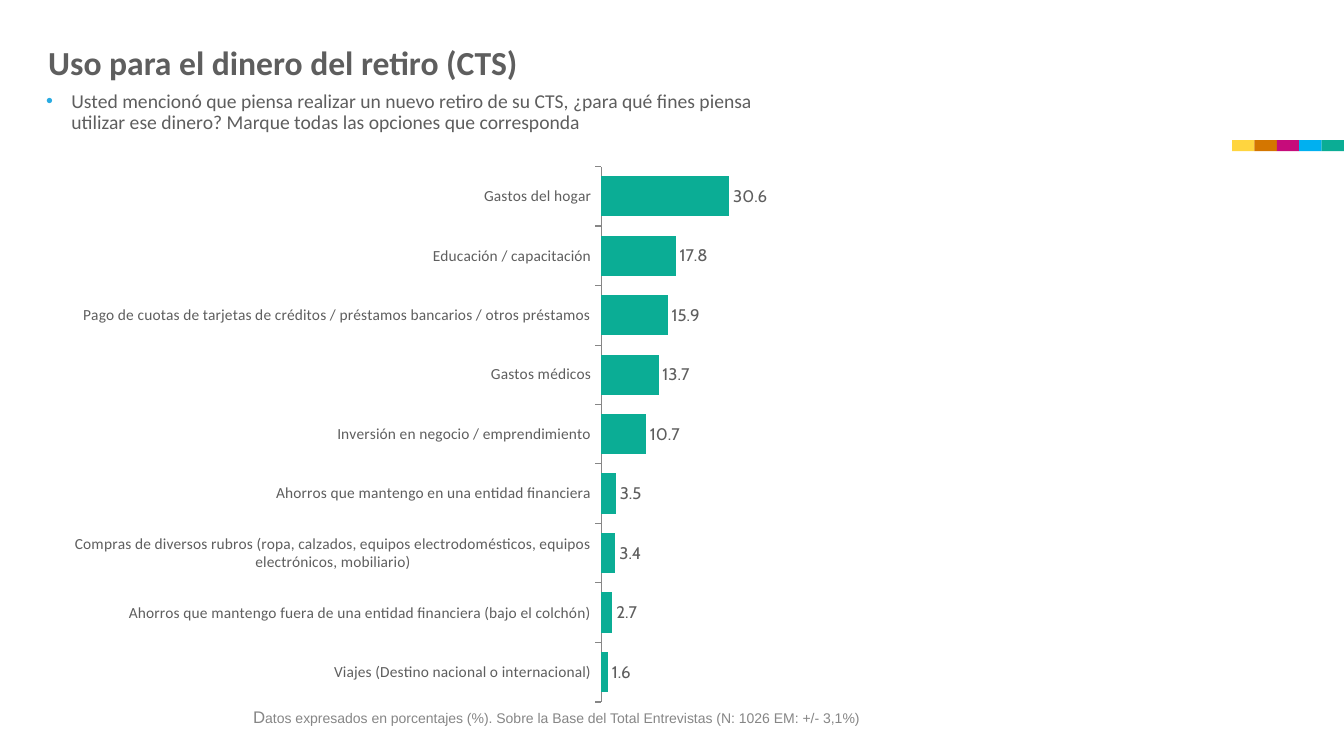
from dataclasses import dataclass

from lxml import etree
from pptx import Presentation
from pptx.chart.data import CategoryChartData
from pptx.dml.color import RGBColor
from pptx.enum.chart import XL_CHART_TYPE, XL_LABEL_POSITION, XL_TICK_LABEL_POSITION, XL_TICK_MARK
from pptx.enum.shapes import MSO_SHAPE
from pptx.enum.text import MSO_ANCHOR, PP_ALIGN
from pptx.oxml import parse_xml
from pptx.oxml.ns import nsdecls, qn
from pptx.slide import Slide
from pptx.util import Inches, Pt

BAR_CLUSTERED = XL_CHART_TYPE.BAR_CLUSTERED
OUTSIDE_END = XL_LABEL_POSITION.OUTSIDE_END
LABELS_LOW = XL_TICK_LABEL_POSITION.LOW
TICK_OUTSIDE = XL_TICK_MARK.OUTSIDE
TICK_NONE = XL_TICK_MARK.NONE
RECTANGLE = MSO_SHAPE.RECTANGLE
TOP, MIDDLE = MSO_ANCHOR.TOP, MSO_ANCHOR.MIDDLE
LEFT, RIGHT = PP_ALIGN.LEFT, PP_ALIGN.RIGHT


@dataclass(frozen=True)
class Theme:
    text: str = "5E5E5E"
    note: str = "868686"
    bullet: str = "29ABE2"
    bar: str = "0BAD95"
    stripe: tuple[str, ...] = ("FFD53F", "D47600", "C60C7B", "00B0F0", "0BAD95")
    body_font: str = "Calibri"
    chart_font: str = "Cabin"
    note_font: str = "Arial"
    title_size: int = 24
    question_size: int = 14
    value_size: int = 12
    category_size: int = 11
    note_initial_size: int = 12
    note_size: int = 10


THEME = Theme()


@dataclass(frozen=True)
class Span:
    text: str
    size: int


@dataclass(frozen=True)
class TextBlock:
    left: float
    top: float
    width: float
    height: float
    spans: tuple[Span, ...]
    font: str
    color: str
    bold: bool = False
    bullet: bool = False
    anchor: MSO_ANCHOR = TOP
    align: PP_ALIGN = LEFT
    line_spacing: float = 1.0


@dataclass(frozen=True)
class Use:
    name: str
    percent: float


TEXT_BLOCKS = (
    TextBlock(
        0.38, 0.41, 10.79, 0.52,
        (Span("Uso para el dinero del retiro (CTS)", THEME.title_size),),
        THEME.body_font, THEME.text, bold=True, line_spacing=0.9,
    ),
    TextBlock(
        0.36, 0.86, 7.36, 0.42,
        (Span("Usted mencionó que piensa realizar un nuevo retiro de su CTS, ¿para qué fines piensa "
              "utilizar ese dinero? Marque todas las opciones que corresponda", THEME.question_size),),
        THEME.body_font, THEME.text, bullet=True, line_spacing=0.9,
    ),
    TextBlock(
        0.82, 6.96, 7.8, 0.31,
        (Span("D", THEME.note_initial_size),
         Span("atos expresados en porcentajes (%). Sobre la Base del Total Entrevistas "
              "(N: 1026 EM: +/- 3,1%)", THEME.note_size)),
        THEME.note_font, THEME.note, anchor=MIDDLE, align=RIGHT,
    ),
)

USES = (
    Use("Gastos del hogar", 30.6),
    Use("Educación / capacitación", 17.8),
    Use("Pago de cuotas de tarjetas de créditos / préstamos bancarios / otros préstamos", 15.9),
    Use("Gastos médicos", 13.7),
    Use("Inversión en negocio / emprendimiento", 10.7),
    Use("Ahorros que mantengo en una entidad financiera", 3.5),
    Use("Compras de diversos rubros (ropa, calzados, equipos electrodomésticos, "
        "equipos electrónicos, mobiliario)", 3.4),
    Use("Ahorros que mantengo fuera de una entidad financiera (bajo el colchón)", 2.7),
    Use("Viajes (Destino nacional o internacional)", 1.6),
)


def rgb(color: str) -> RGBColor:
    return RGBColor.from_string(color)


def add_stripe(page: Slide) -> None:
    width = 1.11 / len(THEME.stripe)
    for index, color in enumerate(THEME.stripe):
        block = page.shapes.add_shape(
            RECTANGLE, Inches(12.22 + index * width), Inches(1.39), Inches(width), Inches(0.11))
        block.shadow.inherit = False
        block.fill.solid()
        block.fill.fore_color.rgb = rgb(color)
        block.line.fill.background()


def add_text(page: Slide, block: TextBlock) -> None:
    box = page.shapes.add_textbox(
        Inches(block.left), Inches(block.top), Inches(block.width), Inches(block.height))
    frame = box.text_frame
    frame.word_wrap = True
    frame.vertical_anchor = block.anchor
    para = frame.paragraphs[0]
    para.alignment = block.align
    para.line_spacing = block.line_spacing
    if block.bullet:
        properties = para._p.get_or_add_pPr()
        properties.set("marL", str(Inches(0.25)))
        properties.set("indent", str(Inches(-0.25)))
        bullet_color = etree.SubElement(properties, qn("a:buClr"))
        etree.SubElement(bullet_color, qn("a:srgbClr"), val=THEME.bullet)
        etree.SubElement(properties, qn("a:buFont"), typeface="Arial")
        etree.SubElement(properties, qn("a:buChar"), char="•")
    para.font.name = block.font
    para.font.bold = block.bold
    para.font.color.rgb = rgb(block.color)
    if len(block.spans) == 1:
        para.font.size = Pt(block.spans[0].size)
    for span in block.spans:
        run = para.add_run()
        run.text = span.text
        if len(block.spans) > 1:
            run.font.size = Pt(span.size)


def add_uses_chart(page: Slide) -> None:
    data = CategoryChartData(number_format="0.0")
    data.categories = [use.name for use in USES]
    data.add_series("Series 1", [use.percent for use in USES])
    chart = page.shapes.add_chart(
        BAR_CLUSTERED, Inches(0.7), Inches(1.29), Inches(13.6), Inches(5.75), data).chart
    chart.has_legend = False
    chart.has_title = False
    chart.font.name = THEME.chart_font
    chart.font.size = Pt(THEME.value_size)
    chart.font.color.rgb = rgb(THEME.text)

    categories = chart.category_axis
    categories.reverse_order = True
    categories.major_tick_mark = TICK_OUTSIDE
    categories.minor_tick_mark = TICK_NONE
    categories.tick_label_position = LABELS_LOW
    categories.has_major_gridlines = False
    categories.format.line.color.rgb = rgb(THEME.note)
    categories.format.line.width = Pt(0.75)
    categories.tick_labels.font.name = THEME.body_font
    categories.tick_labels.font.size = Pt(THEME.category_size)
    categories.tick_labels.font.color.rgb = rgb(THEME.text)

    values = chart.value_axis
    values.minimum_scale = 0
    values.maximum_scale = 80
    values.has_major_gridlines = False
    values.visible = False

    plot = chart.plots[0]
    plot.gap_width = 47
    plot.vary_by_categories = False
    plot.has_data_labels = True
    labels = plot.data_labels
    labels.show_value = True
    labels.position = OUTSIDE_END
    labels.number_format = "0.0"
    labels.number_format_is_linked = False
    bars = plot.series[0].format
    bars.fill.solid()
    bars.fill.fore_color.rgb = rgb(THEME.bar)

    area = chart._chartSpace.chart.plotArea
    for old_layout in area.findall(qn("c:layout")):
        area.remove(old_layout)
    area.insert(0, parse_xml(
        f'<c:layout {nsdecls("c")}><c:manualLayout><c:layoutTarget val="inner"/>'
        '<c:xMode val="edge"/><c:yMode val="edge"/><c:x val="0.387"/><c:y val="0.063"/>'
        '<c:w val="0.244"/><c:h val="0.924"/></c:manualLayout></c:layout>'))


def main() -> None:
    deck = Presentation()
    deck.slide_width, deck.slide_height = Inches(13.33), Inches(7.5)
    page = deck.slides.add_slide(deck.slide_layouts[6])
    add_stripe(page)
    for block in TEXT_BLOCKS:
        add_text(page, block)
    add_uses_chart(page)
    deck.save("out.pptx")


if __name__ == "__main__":
    main()
